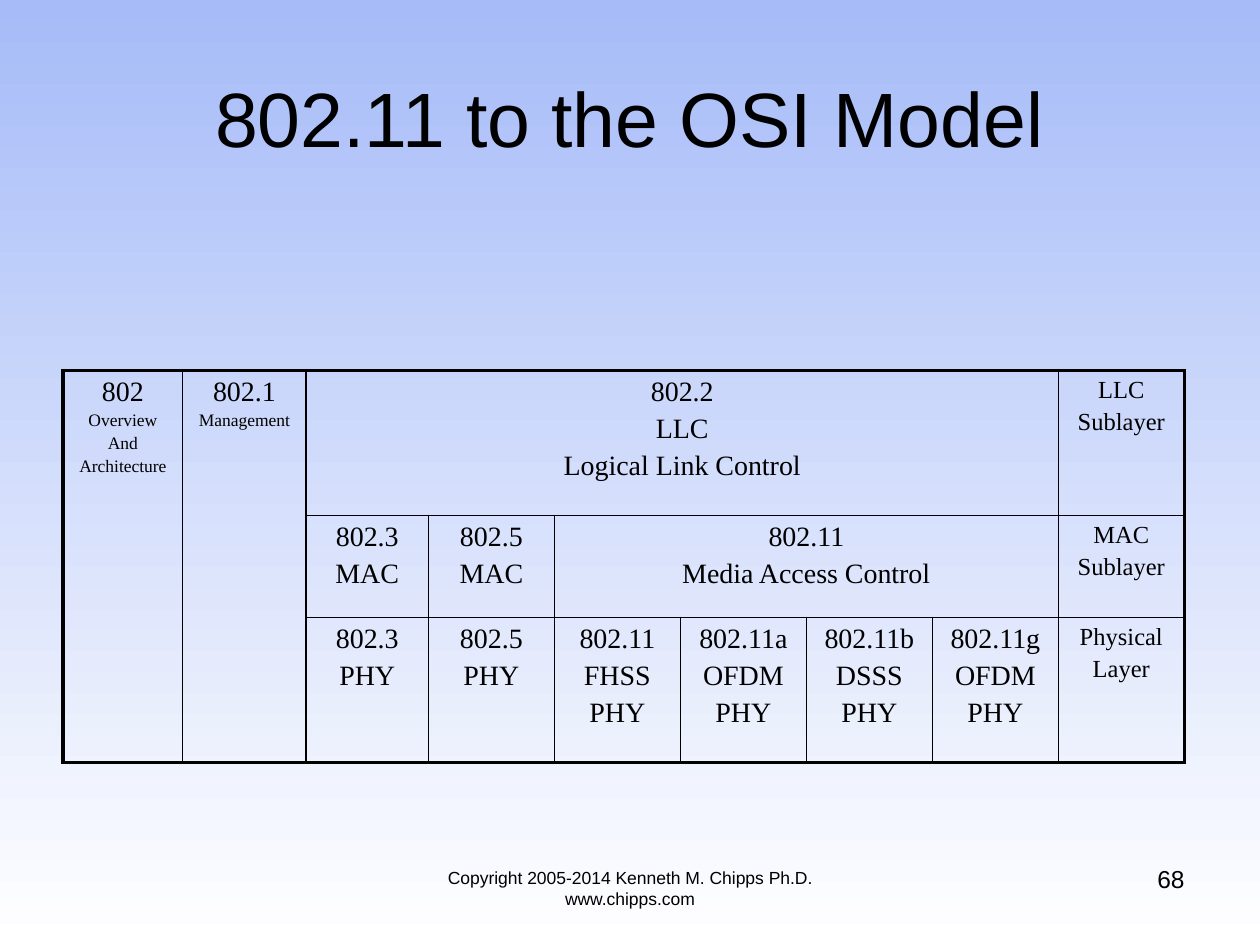
from lxml import etree
from pptx import Presentation
from pptx.dml.color import RGBColor
from pptx.enum.text import MSO_ANCHOR, PP_ALIGN
from pptx.oxml.ns import qn
from pptx.util import Inches, Pt

BLACK = RGBColor(0x00, 0x00, 0x00)
SKY = RGBColor(0xA6, 0xBB, 0xF8)
WHITE = RGBColor(0xFF, 0xFF, 0xFF)
SANS, SERIF = "Arial", "Times New Roman"
CENTER, RIGHT = PP_ALIGN.CENTER, PP_ALIGN.RIGHT
TOP, MIDDLE = MSO_ANCHOR.TOP, MSO_ANCHOR.MIDDLE
THIN, THICK = 1, 2.25

COL_WIDTHS = [0.95, 0.98, 0.97] + [1] * 6
ROW_HEIGHTS = [1.15, 0.81, 1.15]

# row, column, row span, column span, lines, first size, size of the rest
BLOCKS = [
    (0, 0, 3, 1, ["802", "Overview", "And", "Architecture"], 16, 10),
    (0, 1, 3, 1, ["802.1", "Management"], 16, 10),
    (0, 2, 1, 6, ["802.2", "LLC", "Logical Link Control"], 16, 16),
    (0, 8, 1, 1, ["LLC", "Sublayer"], 14, 14),
    (1, 2, 1, 1, ["802.3", "MAC"], 16, 16),
    (1, 3, 1, 1, ["802.5", "MAC"], 16, 16),
    (1, 4, 1, 4, ["802.11", "Media Access Control"], 16, 16),
    (1, 8, 1, 1, ["MAC", "Sublayer"], 14, 14),
    (2, 2, 1, 1, ["802.3", "PHY"], 16, 16),
    (2, 3, 1, 1, ["802.5", "PHY"], 16, 16),
    (2, 4, 1, 1, ["802.11", "FHSS", "PHY"], 16, 16),
    (2, 5, 1, 1, ["802.11a", "OFDM", "PHY"], 16, 16),
    (2, 6, 1, 1, ["802.11b", "DSSS", "PHY"], 16, 16),
    (2, 7, 1, 1, ["802.11g", "OFDM", "PHY"], 16, 16),
    (2, 8, 1, 1, ["Physical", "Layer"], 14, 14),
]


def write(tf, lines, size, rest=None, font=SANS, align=CENTER, before=0):
    for i, line in enumerate(lines):
        p = tf.paragraphs[0] if i == 0 else tf.add_paragraph()
        points = size if i == 0 or rest is None else rest
        p.alignment = align
        p.space_before = Pt(points * before)
        r = p.add_run()
        r.text = line
        r.font.size = Pt(points)
        r.font.name = font
        r.font.color.rgb = BLACK


def set_background(s):
    fill = s.background.fill
    fill.gradient()
    fill.gradient_angle = 270
    for stop, color, position in zip(fill.gradient_stops, (SKY, WHITE), (0, 1)):
        stop.color.rgb = color
        stop.position = position


def add_title(s, text):
    sp = s.shapes.title
    sp.left, sp.top = Inches(0.5), Inches(0.3)
    sp.width, sp.height = Inches(9), Inches(1.25)
    sp.text_frame.vertical_anchor = MIDDLE
    write(sp.text_frame, [text], 44)


def add_label(s, text, left, top, width, height, **style):
    sp = s.shapes.add_textbox(Inches(left), Inches(top), Inches(width), Inches(height))
    sp.text_frame.word_wrap = True
    write(sp.text_frame, [text], **style)


def add_border(cell, side, points):
    tc_pr = cell._tc.get_or_add_tcPr()
    ln = etree.SubElement(tc_pr, qn("a:ln" + side), w=str(Pt(points)))
    fill = etree.SubElement(ln, qn("a:solidFill"))
    etree.SubElement(fill, qn("a:srgbClr"), val=str(BLACK))


def format_block(table, row, col, row_span, col_span):
    last_row, last_col = row + row_span - 1, col + col_span - 1
    outer = {
        "L": col == 0,
        "R": last_col == len(COL_WIDTHS) - 1,
        "T": row == 0,
        "B": last_row == len(ROW_HEIGHTS) - 1,
    }
    for r in range(row, last_row + 1):
        for c in range(col, last_col + 1):
            cell = table.cell(r, c)
            edges = {"L": c == col, "R": c == last_col, "T": r == row, "B": r == last_row}
            for side, on_edge in edges.items():
                if on_edge or (r, c) == (row, col):
                    add_border(cell, side, THICK if outer[side] else THIN)
            cell.fill.background()


def add_layer_table(s):
    table = s.shapes.add_table(
        len(ROW_HEIGHTS), len(COL_WIDTHS), Inches(0.5), Inches(2.94),
        Inches(sum(COL_WIDTHS)), Inches(sum(ROW_HEIGHTS)),
    ).table
    table.first_row = table.horz_banding = False
    for column, width in zip(table.columns, COL_WIDTHS):
        column.width = Inches(width)
    for table_row, height in zip(table.rows, ROW_HEIGHTS):
        table_row.height = Inches(height)
    for row, col, row_span, col_span, lines, size, rest in BLOCKS:
        cell = table.cell(row, col)
        if row_span * col_span > 1:
            cell.merge(table.cell(row + row_span - 1, col + col_span - 1))
        format_block(table, row, col, row_span, col_span)
        cell.vertical_anchor = TOP
        write(cell.text_frame, lines, size, rest=rest, font=SERIF, before=0.2)


def main():
    prs = Presentation()
    prs.slide_width, prs.slide_height = Inches(10), Inches(7.5)
    s = prs.slides.add_slide(prs.slide_layouts[5])
    set_background(s)
    add_title(s, "802.11 to the OSI Model")
    add_layer_table(s)
    add_label(s, "68", 7.17, 6.81, 2.33, 0.52, size=14, align=RIGHT)
    add_label(s, "Copyright 2005-2014 Kenneth M. Chipps Ph.D. www.chipps.com",
              3, 6.83, 4, 0.52, size=10)
    prs.save("out.pptx")


if __name__ == "__main__":
    main()
